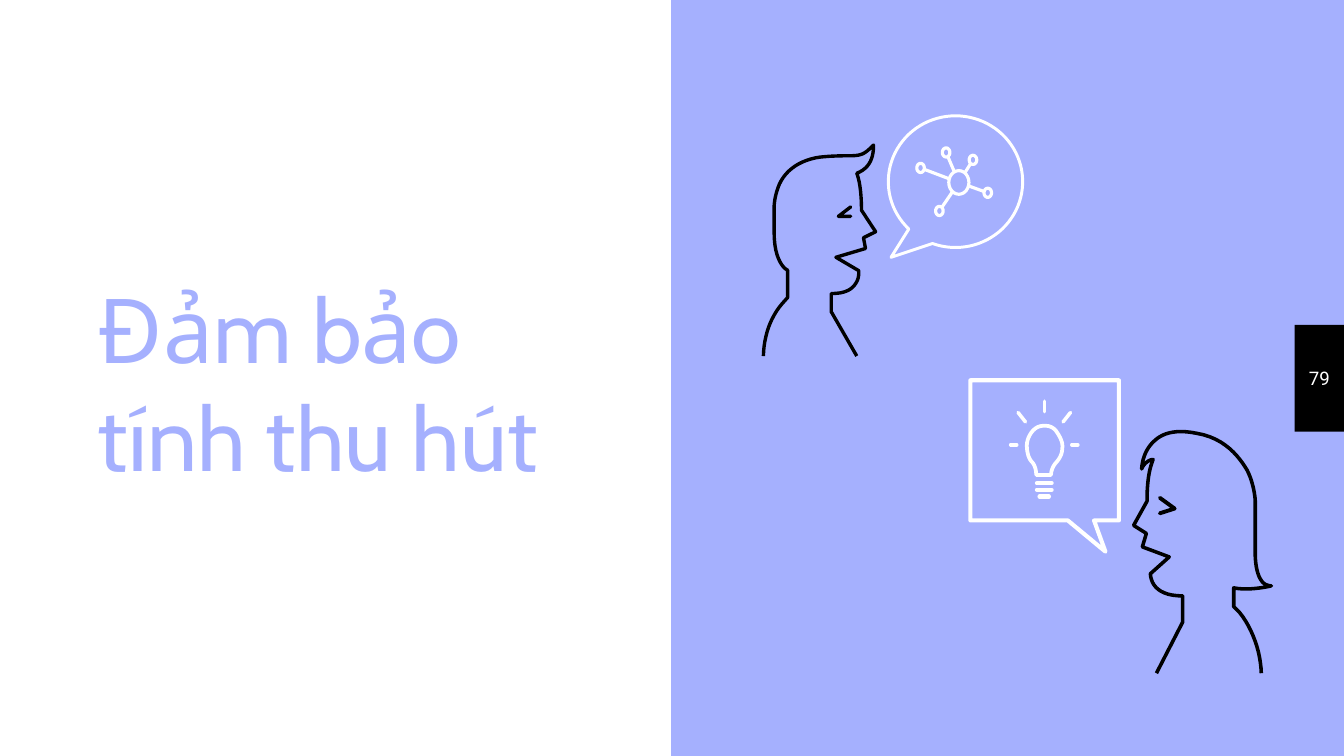
import math
from dataclasses import dataclass

import lxml.etree
import pptx
import pptx.dml.color
import pptx.enum.shapes
import pptx.enum.text
import pptx.oxml.ns
import pptx.util

Cm = pptx.util.Cm
Pt = pptx.util.Pt
qn = pptx.oxml.ns.qn

LILAC, WHITE, BLACK = "A5B0FE", "FFFFFF", "000000"
UNIT = Cm(0.0254)  # drawing grid: one hundredth of an inch


@dataclass
class Stroke:
    """Steps hold x, y for a line and two controls plus an end for a curve."""
    steps: list
    color: str
    width: float
    closed: bool = False
    cap: str = "flat"
    more: tuple = ()  # further contours of the same shape


@dataclass
class Segment:
    x1: float
    y1: float
    x2: float
    y2: float
    width: float


@dataclass
class Oval:
    x: float
    y: float
    rx: float = 2.8
    ry: float = 3.4

    def arc(self, first: int = 0, last: int = 360, step: int = 15) -> list:
        angles = [math.radians(a) for a in range(first, last + 1, step)]
        return [(self.x + self.rx * math.cos(a), self.y + self.ry * math.sin(a)) for a in angles]

    def edge_towards(self, other: "Oval") -> tuple:
        dx, dy = other.x - self.x, other.y - self.y
        reach = math.hypot(dx / self.rx, dy / self.ry)
        return self.x + dx / reach, self.y + dy / reach


def rgb(value: str) -> pptx.dml.color.RGBColor:
    return pptx.dml.color.RGBColor.from_string(value)


def flatten(steps: list, parts: int = 12) -> list:
    """Turn lines and cubic curves into points on the slide."""
    points = [steps[0]]
    for step in steps[1:]:
        if len(step) == 2:
            points.append(step)
            continue
        start, c1, c2, end = points[-1], step[:2], step[2:4], step[4:]
        for i in range(1, parts + 1):
            t = i / parts
            weights = ((1 - t) ** 3, 3 * t * (1 - t) ** 2, 3 * t * t * (1 - t), t ** 3)
            points.append(tuple(sum(w * p[axis] for w, p in zip(weights, (start, c1, c2, end)))
                                for axis in (0, 1)))
    return [(x * UNIT, y * UNIT) for x, y in points]


def style_line(shape, color: str, width: float, cap: str) -> None:
    shape.line.color.rgb = rgb(color)
    shape.line.width = Pt(width)
    outline = shape.element.spPr.find(qn("a:ln"))
    outline.set("cap", cap)
    lxml.etree.SubElement(outline, qn("a:round"))


def draw_stroke(shapes, stroke: Stroke) -> None:
    points = flatten(stroke.steps)
    builder = shapes.build_freeform(*points[0], scale=1.0)
    builder.add_line_segments(points[1:], close=stroke.closed)
    for contour in stroke.more:
        points = flatten(contour)
        builder.move_to(*points[0])
        builder.add_line_segments(points[1:], close=stroke.closed)
    outline = builder.convert_to_shape()
    outline.shadow.inherit = False
    outline.fill.background()
    style_line(outline, stroke.color, stroke.width, stroke.cap)


def draw_segment(shapes, segment: Segment) -> None:
    ends = [round(v * UNIT) for v in (segment.x1, segment.y1, segment.x2, segment.y2)]
    line = shapes.add_connector(pptx.enum.shapes.MSO_CONNECTOR.STRAIGHT, *ends)
    style_line(line, WHITE, segment.width, "rnd")
    lxml.etree.SubElement(line.element.spPr, qn("a:effectLst"))


def add_block(shapes, left, top, width, height, color: str):
    block = shapes.add_shape(pptx.enum.shapes.MSO_SHAPE.RECTANGLE, left, top, width, height)
    block.shadow.inherit = False
    block.fill.solid()
    block.fill.fore_color.rgb = rgb(color)
    block.line.fill.background()
    return block


def write(shape, lines: list, frame_format: dict, font_format: dict, color: str, align) -> None:
    frame = shape.text_frame
    frame.text = "\n".join(lines)
    for name, value in frame_format.items():
        setattr(frame, name, value)
    for paragraph in frame.paragraphs:
        paragraph.alignment = align
        font = paragraph.runs[0].font
        for name, value in font_format.items():
            setattr(font, name, value)
        font.color.rgb = rgb(color)


# Talking man
MAN = [
    Stroke([(633, 154), (623.8, 161), (633, 161)], BLACK, 1.8, cap="rnd"),
    Stroke([(637.5, 265), (618.5, 232), (618.5, 218.5),
            (628, 218.5, 633, 216, 636, 212), (639, 208, 639, 205, 639, 201.5),
            (622, 191.5), (644, 185), (642.5, 177), (651.5, 172.5), (641, 156.5),
            (641, 141, 639, 133, 637.5, 129), (648, 125, 650, 116, 650, 108),
            (643, 115, 641, 116, 631, 116), (626, 116, 620, 116, 610, 117),
            (596, 119, 585, 126, 580, 137), (576, 146, 576, 154, 576, 155),
            (576, 173), (576, 194, 584, 200.5, 586, 201), (586, 221.5), (582, 226),
            (573, 236.5, 568.5, 250, 568, 265)], BLACK, 1.8),
]

# Talking woman
WOMAN = [
    Stroke([(863, 370.5), (874, 378.5), (863, 382)], BLACK, 2.1, cap="rnd"),
    Stroke([(860.5, 501), (880, 463), (880, 443.5), (863, 443.5, 856.5, 436, 856, 427),
            (870, 414.5), (850, 407), (853, 397), (843.5, 391), (853.5, 373),
            (853.5, 355, 856, 347, 858, 342), (855, 342, 851, 345, 849.5, 349),
            (850, 341, 853, 334, 858, 329), (864, 323, 873, 319, 890.5, 322.5),
            (911.5, 326, 922, 340, 928, 350), (933, 360, 934, 371, 934, 373),
            (934, 413), (934, 413, 934, 426, 938.5, 432), (940, 434.5, 943, 436, 946, 436),
            (946, 436, 930, 440, 918, 437.5), (918, 451.5), (922.5, 456),
            (932, 468, 938, 485, 938.5, 501)], BLACK, 1.9),
]

# Speech bubbles
BUBBLES = [
    Stroke([(663, 191.5)] + Oval(711, 135.2, 50, 49).arc(134, 470, 4), WHITE, 1.6, closed=True),
    Stroke([(722, 283), (832.5, 283), (832.5, 387.3), (814, 387.3), (822.5, 410.5),
            (794.5, 387.3), (722, 387.3)], WHITE, 2.2, closed=True),
]

# Network in the round bubble
HUB = Oval(713.5, 135.8, 7.5, 8.8)
NODES = [Oval(735, 143.5), Oval(699, 157), Oval(685, 125), Oval(704, 113.5), Oval(724, 119)]
NETWORK = Stroke(HUB.arc(), WHITE, 1.7, more=(
    *(node.arc() for node in NODES),
    *([HUB.edge_towards(node), node.edge_towards(HUB)] for node in NODES)))

# Light bulb in the square bubble
BULB = Stroke([(771, 353.5), (771, 350, 770, 346, 768, 344), (765, 341, 764, 336, 764, 331),
               (764.5, 324, 769.5, 317.5, 775, 317), (779, 316.5, 783, 317, 786, 321),
               (788, 324, 790.5, 328, 790.5, 332), (790.5, 338, 788.5, 341, 786, 344),
               (784, 346, 782, 350, 782, 353.5)], WHITE, 2, closed=True)
BULB_X = 777
BASE = [Segment(BULB_X - half, 359.5 + 5 * i, BULB_X + half, 359.5 + 5 * i, 2.2)
        for i, half in enumerate((5.5, 5.5, 3.5))]
RAYS = [Segment(BULB_X, 298.5, BULB_X, 306.5, 1.7)] + [
    Segment(BULB_X + side * far, y1, BULB_X + side * near, y2, 1.9)
    for side in (-1, 1) for far, y1, near, y2 in ((19.5, 307, 14, 314), (25, 331, 20.5, 331))]


def main() -> None:
    deck = pptx.Presentation()
    deck.slide_width, deck.slide_height = Cm(25.4), Cm(14.29)
    slide = deck.slides.add_slide(deck.slide_layouts[5])
    shapes = slide.shapes
    slide.background.fill.solid()
    slide.background.fill.fore_color.rgb = rgb(LILAC)

    # White half behind the title
    title = shapes.title
    panel = add_block(shapes, 0, 0, Cm(12.68), deck.slide_height, WHITE)
    title.element.addprevious(panel.element)
    place = {"left": Cm(1.6), "top": Cm(4.78), "width": Cm(10.41), "height": Cm(4.72)}
    for name, value in place.items():
        setattr(title, name, value)
    insets = {f"margin_{side}": Cm(0.25) for side in ("left", "right", "top", "bottom")}
    write(title, ["Đảm bảo", "tính thu hút"],
          {**insets, "word_wrap": True, "auto_size": pptx.enum.text.MSO_AUTO_SIZE.NONE,
           "vertical_anchor": pptx.enum.text.MSO_ANCHOR.BOTTOM},
          {"name": "Cabin", "size": Pt(48)}, LILAC, pptx.enum.text.PP_ALIGN.LEFT)

    # Page number tab
    page_tab = add_block(shapes, Cm(24.47), Cm(6.14), Cm(0.93), Cm(2.02), BLACK)
    write(page_tab, ["79"],
          {**insets, "word_wrap": False, "vertical_anchor": pptx.enum.text.MSO_ANCHOR.MIDDLE},
          {"name": "Roboto", "size": Pt(10)}, WHITE, pptx.enum.text.PP_ALIGN.CENTER)

    # Conversation
    for stroke in WOMAN + MAN + BUBBLES + [NETWORK, BULB]:
        draw_stroke(shapes, stroke)
    for segment in BASE + RAYS:
        draw_segment(shapes, segment)

    deck.save("out.pptx")


if __name__ == "__main__":
    main()
